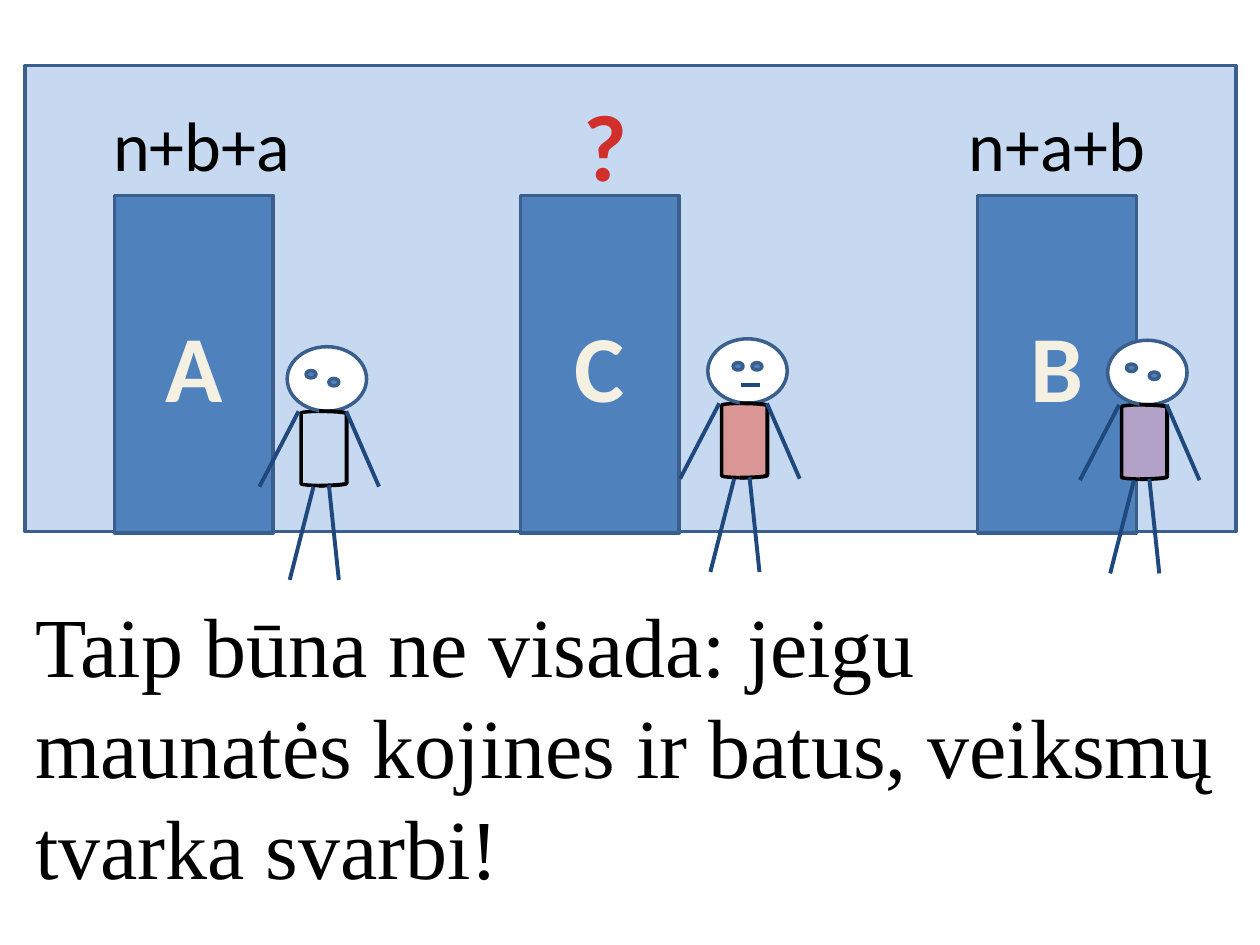
from lxml.etree import fromstring
from pptx import Presentation
from pptx.dml.color import RGBColor
from pptx.enum.shapes import MSO_CONNECTOR, MSO_SHAPE
from pptx.enum.text import MSO_ANCHOR, MSO_AUTO_SIZE, PP_ALIGN
from pptx.oxml.ns import qn
from pptx.util import Cm, Pt

COLORS = {
    "wall": "C6D9F1", "door": "4F81BD", "edge": "3A5F8C", "limb": "1F497D",
    "cream": "F4F1E3", "letter edge": "054697", "black": "000000",
    "white": "FFFFFF", "purple": "B3A2C7", "rose": "D99694",
    "red light": "FC7C7A", "red": "D02F2C", "red dark": "C70500",
}
DRAWING = 'xmlns:a="http://schemas.openxmlformats.org/drawingml/2006/main"'
LETTER = {"size": Pt(54), "bold": True, "name": "Calibri"}
FORMULA = {"size": Pt(40), "name": "Calibri"}
SENTENCE = {"size": Pt(48), "name": "Times New Roman"}

# Places below are measured from the top left corner of the head.
LIMBS = [
    (0.84, 2.79, 1.04, 4.7), (1.19, 1.3, 1.85, 2.82),
    (0.53, 2.82, 0.05, 4.7), (0.23, 1.3, -0.56, 2.82),
]
TILTED_EYES = [(0.38, 0.48), (0.84, 0.64)]
LEVEL_EYES = [(0.51, 0.48), (0.89, 0.48)]


def rgb(name):
    return RGBColor.from_string(COLORS[name])


def add_figure_part(shapes, kind, place, fill, line="edge", width=2):
    """Add a preset shape with a flat fill and outline."""
    shape = shapes.add_shape(kind, *map(Cm, place))
    shape.shadow.inherit = False
    shape.fill.solid()
    shape.fill.fore_color.rgb = rgb(fill)
    shape.line.color.rgb = rgb(line)
    shape.line.width = Pt(width)
    return shape


def add_line(shapes, ends):
    line = shapes.add_connector(MSO_CONNECTOR.STRAIGHT, *map(Cm, ends))
    line.line.color.rgb = rgb("limb")
    line.line.width = Pt(2.25)
    line._element.spPr.append(line._element.makeelement(qn("a:effectLst")))


def write(frame, text, font, color=None, align=PP_ALIGN.LEFT):
    para = frame.paragraphs[0]
    para.alignment = align
    span = para.add_run()
    span.text = text
    for key, value in font.items():
        setattr(span.font, key, value)
    if color:
        span.font.color.rgb = rgb(color)
    return span


def put_first(span, markup):
    """Set a text outline or gradient ahead of the other run properties."""
    span._r.get_or_add_rPr().insert(0, fromstring(markup))


def add_door(shapes, left, letter):
    door = add_figure_part(shapes, MSO_SHAPE.RECTANGLE, (left, 3.94, 3.2, 6.81), "door")
    door.text_frame.vertical_anchor = MSO_ANCHOR.MIDDLE
    span = write(door.text_frame, letter, LETTER, "cream", PP_ALIGN.CENTER)
    put_first(span, f'<a:ln {DRAWING} w="12700"><a:solidFill><a:srgbClr '
                    f'val="{COLORS["letter edge"]}"/></a:solidFill></a:ln>')


def add_text(shapes, place, text, font, color="black", align=PP_ALIGN.LEFT, wrap=True):
    box = shapes.add_textbox(*map(Cm, place))
    box.text_frame.word_wrap = wrap
    box.text_frame.auto_size = MSO_AUTO_SIZE.SHAPE_TO_FIT_TEXT
    return write(box.text_frame, text, font, color, align)


def add_person(shapes, left, top, shirt, eyes):
    person = shapes.add_group_shape().shapes
    add_figure_part(person, MSO_SHAPE.LEFT_BRACKET,
                    (left + 0.28, top + 1.3, 0.46, 1.5), shirt, "black")
    add_figure_part(person, MSO_SHAPE.OVAL, (left, top, 1.6, 1.3), "white")
    for across, down in eyes:
        add_figure_part(person, MSO_SHAPE.OVAL,
                        (left + across, top + down, 0.2, 0.15), "door")
    add_figure_part(person, MSO_SHAPE.RIGHT_BRACKET,
                    (left + 0.64, top + 1.3, 0.56, 1.5), shirt, "black", 2.25)
    for x1, y1, x2, y2 in LIMBS:
        add_line(person, (left + x1, top + y1, left + x2, top + y2))


def add_question_mark(shapes):
    span = add_text(shapes, (11.51, 1.63, 1.4, 2.57), "?", LETTER, None,
                    PP_ALIGN.CENTER, False)
    stops = "".join(
        f'<a:gs pos="{percent * 1000}"><a:srgbClr val="{COLORS[name]}"/></a:gs>'
        for percent, name in [(0, "red light"), (75, "red"), (100, "red dark")])
    put_first(span, f'<a:gradFill {DRAWING}><a:gsLst>{stops}</a:gsLst>'
                    '<a:lin ang="5400000"/></a:gradFill>')


def main():
    deck = Presentation()
    deck.slide_width, deck.slide_height = Cm(25.4), Cm(19.05)
    shapes = deck.slides.add_slide(deck.slide_layouts[6]).shapes

    add_figure_part(shapes, MSO_SHAPE.RECTANGLE, (0.51, 1.32, 24.41, 9.4), "wall")
    for left, letter in [(2.31, "A"), (19.71, "B"), (10.49, "C")]:
        add_door(shapes, left, letter)
    add_person(shapes, 22.33, 6.86, "purple", TILTED_EYES)
    add_person(shapes, 5.79, 6.99, "wall", TILTED_EYES)
    add_person(shapes, 14.27, 6.83, "rose", LEVEL_EYES)
    add_question_mark(shapes)
    add_line(shapes, (15.32, 7.77, 14.94, 7.77))
    for left, formula in [(2.03, "n+b+a"), (19.28, "n+a+b")]:
        add_text(shapes, (left, 1.93, 4.95, 1.96), formula, FORMULA)
    add_text(shapes, (0.46, 11.84, 24.89, 6.4),
             "Taip būna ne visada: jeigu maunatės kojines ir batus, "
             "veiksmų tvarka svarbi!", SENTENCE)
    deck.save("out.pptx")


if __name__ == "__main__":
    main()
